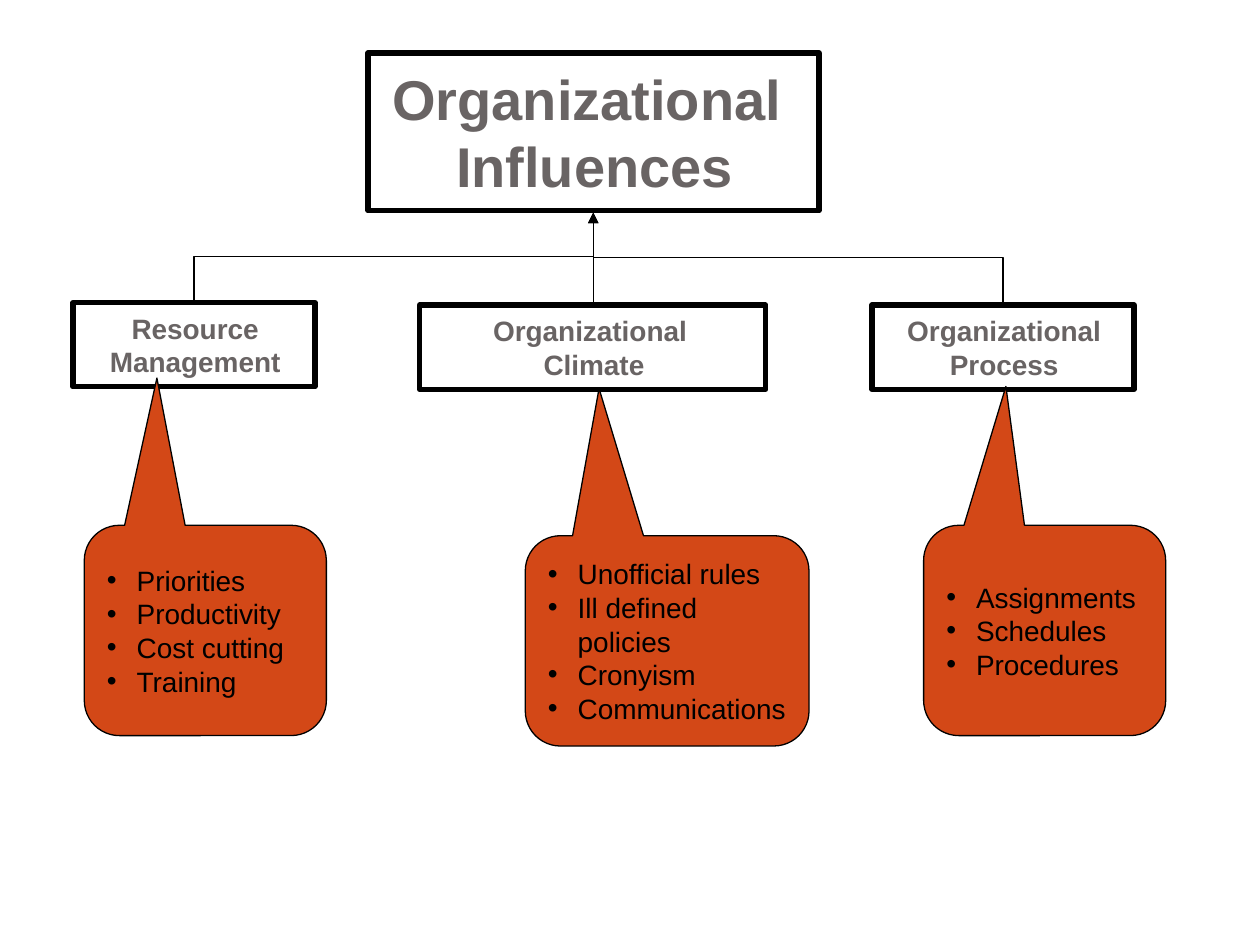
from lxml import etree
from pptx import Presentation, util as u
from pptx.dml.color import RGBColor
from pptx.enum import shapes, text
from pptx.oxml.ns import qn

COLORS = {"line": "000000", "heading": "696464", "callout": "D34817", "item": "000000"}
HUB = (11.96, 4.29)  # where all arrows meet, in cm


def rgb(name):
    return RGBColor.from_string(COLORS[name])


class SlideBuilder:
    font = "Arial"
    frame_format = {"word_wrap": True, "vertical_anchor": text.MSO_ANCHOR.MIDDLE,
                    "margin_right": u.Cm(0.2)}

    def __init__(self, s):
        self.s = s

    def shape(self, kind, box, line_width, fill=None):
        sp = self.s.shapes.add_shape(kind, *map(u.Cm, box))
        sp.shadow.inherit = False
        if fill:
            sp.fill.solid()
            sp.fill.fore_color.rgb = rgb(fill)
        else:
            sp.fill.background()
        sp.line.color.rgb = rgb("line")
        sp.line.width = u.Pt(line_width)
        for name, value in self.frame_format.items():
            setattr(sp.text_frame, name, value)
        return sp

    def fill_paragraph(self, p, words, size, color, bold, align):
        p.text = words
        p.alignment = align
        for r in p.runs:
            for name, value in {"name": self.font, "size": u.Pt(size), "bold": bold}.items():
                setattr(r.font, name, value)
            r.font.color.rgb = rgb(color)

    def heading(self, words, box, size=16):
        sp = self.shape(shapes.MSO_SHAPE.RECTANGLE, box, 3)
        self.fill_paragraph(sp.text_frame.paragraphs[0], words, size, "heading", True,
                            text.PP_ALIGN.CENTER)

    def callout(self, items, box, tip):
        """Bulleted callout; tip is the pointer's offset from the centre, in box sizes."""
        sp = self.shape(shapes.MSO_SHAPE.ROUNDED_RECTANGULAR_CALLOUT, box, 0.75, "callout")
        for i, value in enumerate((*tip, 0.167)):
            sp.adjustments[i] = value
        tf = sp.text_frame
        for i, item in enumerate(items):
            p = tf.add_paragraph() if i else tf.paragraphs[0]
            self.fill_paragraph(p, item, 16, "item", False, text.PP_ALIGN.LEFT)
            pPr = p._p.get_or_add_pPr()
            pPr.set("marL", str(u.Cm(0.6)))
            pPr.set("indent", str(u.Cm(-0.6)))
            etree.SubElement(pPr, qn("a:buFont")).set("typeface", self.font)
            etree.SubElement(pPr, qn("a:buChar")).set("char", "•")

    def arrow(self, x, y):
        """Arrow going up from (x, y) to HUB, bent halfway unless straight above."""
        hub_x, hub_y = HUB
        if x == hub_x:
            kind, ends, rot = shapes.MSO_CONNECTOR.STRAIGHT, (x, y, hub_x, hub_y), 0
        else:
            # An elbow leaves sideways, so lay it out on its side and turn it.
            kind = shapes.MSO_CONNECTOR.ELBOW
            mid_x, mid_y = (x + hub_x) / 2, (y + hub_y) / 2
            dx, dy = (y - hub_y) / 2, abs(x - hub_x) / 2
            rot = 270
            if x > hub_x:
                dx, rot = -dx, 90
            ends = (mid_x - dx, mid_y - dy, mid_x + dx, mid_y + dy)
        c = self.s.shapes.add_connector(kind, *map(u.Cm, ends))
        c.line.color.rgb = rgb("line")
        c.line.width = u.Pt(0.75)
        spPr = c._element.spPr
        if rot:
            spPr.find(qn("a:xfrm")).set("rot", str(rot * 60000))
        etree.SubElement(spPr.find(qn("a:ln")), qn("a:tailEnd")).set("type", "triangle")
        etree.SubElement(spPr, qn("a:effectLst"))


def main():
    prs = Presentation()
    prs.slide_width, prs.slide_height = u.Cm(25.4), u.Cm(19.05)
    b = SlideBuilder(prs.slides.add_slide(prs.slide_layouts[6]))

    b.heading("Organizational \vInfluences", (7.42, 1.07, 9.09, 3.18), 32)
    b.heading("Resource\vManagement", (1.47, 6.1, 4.88, 1.7))
    b.heading("Organizational\vProcess", (17.58, 6.15, 5.28, 1.7))
    b.heading("Organizational \vClimate", (8.46, 6.15, 6.98, 1.7))

    for start in ((3.91, 6.05), (20.22, 6.1), (HUB[0], 6.1)):
        b.arrow(*start)

    b.callout(("Priorities", "Productivity", "Cost cutting", "Training"),
              (1.7, 10.59, 4.88, 4.24), (-0.2, -1.2))
    b.callout(("Unofficial rules", "Ill defined policies", "Cronyism", "Communications"),
              (10.59, 10.8, 5.72, 4.24), (-0.24, -1.2))
    b.callout(("Assignments", "Schedules", "Procedures"),
              (18.62, 10.59, 4.88, 4.24), (-0.16, -1.16))

    prs.save("out.pptx")


if __name__ == "__main__":
    main()
